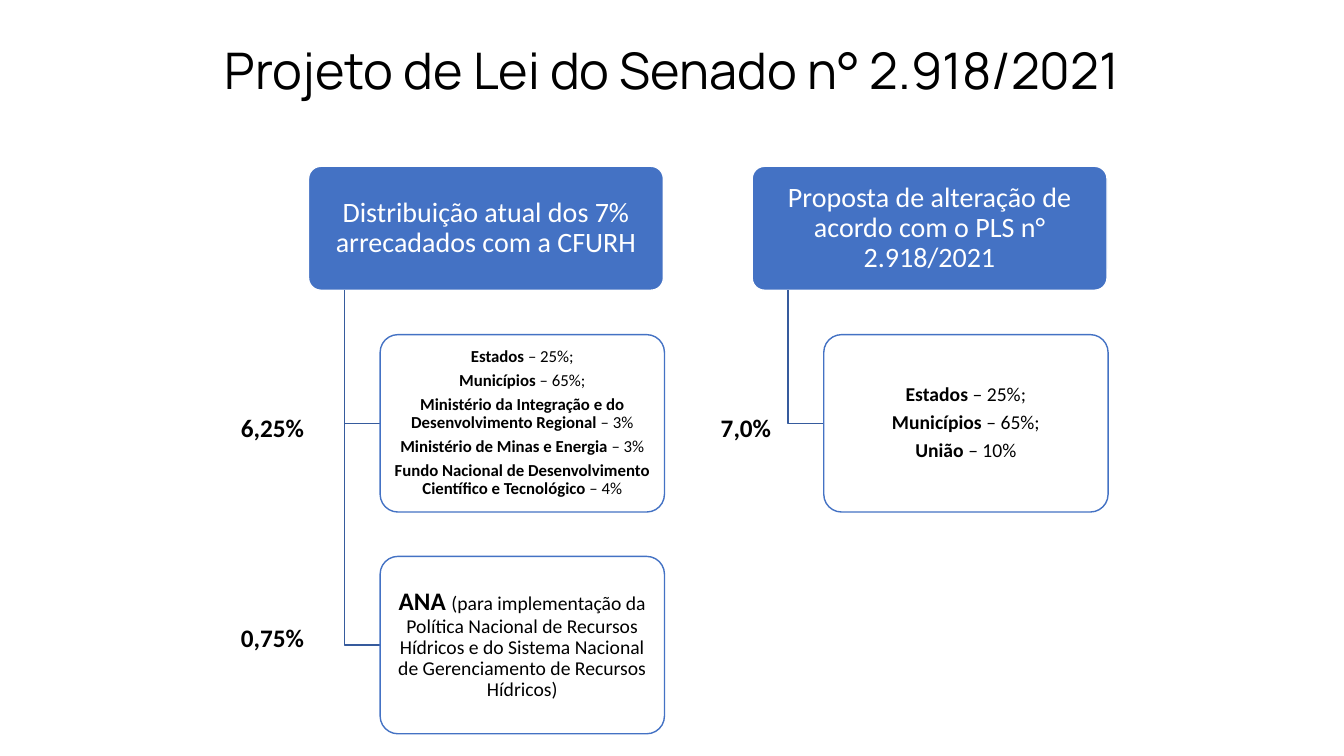
from dataclasses import dataclass

from lxml.etree import SubElement
from pptx import Presentation
from pptx.dml.color import RGBColor
from pptx.enum.shapes import MSO_SHAPE
from pptx.enum.text import MSO_ANCHOR, MSO_AUTO_SIZE, PP_ALIGN
from pptx.oxml.ns import qn
from pptx.util import Inches, Pt


@dataclass(frozen=True)
class Theme:
    blue = RGBColor(0x44, 0x72, 0xC4)
    branch = RGBColor(0x36, 0x5B, 0x9D)
    white = RGBColor(0xFF, 0xFF, 0xFF)
    black = RGBColor(0, 0, 0)
    title_font = "Manrope"
    body_font = "Calibri"
    title_size = 36
    header_size = 20
    label_size = 18
    detail_size = 14
    small_size = 12


theme = Theme()


def add_run(paragraph, text, size, color, bold=False, font_name=theme.body_font):
    run = paragraph.add_run()
    run.text = text
    run.font.name = font_name
    run.font.size = Pt(size)
    run.font.bold = bold
    run.font.color.rgb = color


def add_card(slide, left, top, width, height, fill, line, color, margins, paragraphs):
    """Rounded box; each paragraph is a list of (text, size, bold) runs."""
    card = slide.shapes.add_shape(
        MSO_SHAPE.ROUNDED_RECTANGLE, Inches(left), Inches(top), Inches(width), Inches(height))
    card.adjustments[0] = 0.1
    card.shadow.inherit = False
    card.fill.solid()
    card.fill.fore_color.rgb = fill
    card.line.color.rgb = line
    card.line.width = Pt(1)
    frame = card.text_frame
    frame.word_wrap = True
    frame.vertical_anchor = MSO_ANCHOR.MIDDLE
    frame.margin_left = frame.margin_right = Inches(margins[0])
    frame.margin_top = frame.margin_bottom = Inches(margins[1])
    for index, runs in enumerate(paragraphs):
        paragraph = frame.add_paragraph() if index else frame.paragraphs[0]
        paragraph.alignment = PP_ALIGN.CENTER
        paragraph.line_spacing = 0.9
        paragraph.space_after = Pt(0.35 * runs[0][1])
        for text, size, bold in runs:
            add_run(paragraph, text, size, color, bold)
    return card


presentation = Presentation()
presentation.slide_width = Inches(13.33)
presentation.slide_height = Inches(7.5)
slide = presentation.slides.add_slide(presentation.slide_layouts[5])

title = slide.shapes.title
title.left, title.top = Inches(0), Inches(0.36)
title.width, title.height = Inches(13.33), Inches(0.69)
title.text_frame.auto_size = MSO_AUTO_SIZE.NONE
title.text_frame.word_wrap = True
title.text_frame.vertical_anchor = MSO_ANCHOR.BOTTOM
title_paragraph = title.text_frame.paragraphs[0]
title_paragraph.alignment = PP_ALIGN.CENTER
title_paragraph.line_spacing = 0.9
add_run(title_paragraph, "Projeto de Lei do Senado n° 2.918/2021",
        theme.title_size, theme.black, font_name=theme.title_font)

current_shares = [
    ("Estados", " – 25%;"),
    ("Municípios", " – 65%;"),
    ("Ministério da Integração e do Desenvolvimento Regional", " – 3%"),
    ("Ministério de Minas e Energia", " – 3%"),
    ("Fundo Nacional de Desenvolvimento Científico e Tecnológico ", "– 4%"),
]
proposed_shares = [("Estados", " – 25%;"), ("Municípios", " – 65%;"), ("União ", "– 10%")]
agency = [(
    "ANA ",
    "(para implementação da Política Nacional de Recursos Hídricos e do Sistema Nacional "
    "de Gerenciamento de Recursos Hídricos)",
)]

# Each detail: entries, size of the bold part, size of the rest, text margins
columns = [
    (3.06, "Distribuição atual dos 7% arrecadados com a CFURH", [
        (current_shares, theme.small_size, theme.small_size, (0.03, 0.02)),
        (agency, theme.label_size, theme.detail_size, (0.04, 0.03)),
    ]),
    (7.46, "Proposta de alteração de acordo com o PLS n° 2.918/2021", [
        (proposed_shares, theme.detail_size, theme.detail_size, (0.03, 0.02)),
    ]),
]
header_top, header_width, header_height = 1.65, 3.52, 1.23
header_bottom = header_top + header_height
detail_top, detail_width, detail_height, detail_pitch = 3.32, 2.82, 1.76, 2.2
indent = 0.355

for left, heading, details in columns:
    add_card(slide, left, header_top, header_width, header_height, theme.blue, theme.white,
             theme.white, (0.04, 0.03), [[(heading, theme.header_size, False)]])
    trunk, detail_left = left + indent, left + 2 * indent
    for row, (entries, bold_size, plain_size, margins) in enumerate(details):
        top = detail_top + row * detail_pitch
        middle = top + detail_height / 2

        builder = slide.shapes.build_freeform(Inches(trunk), Inches(header_bottom))
        builder.add_line_segments(
            [(Inches(trunk), Inches(middle)), (Inches(detail_left), Inches(middle))], close=False)
        branch = builder.convert_to_shape()
        branch.shadow.inherit = False
        branch.fill.background()
        branch.line.color.rgb = theme.branch
        branch.line.width = Pt(1)

        paragraphs = [[(name, bold_size, True), (rest, plain_size, False)]
                      for name, rest in entries]
        card = add_card(slide, detail_left, top, detail_width, detail_height, theme.white,
                        theme.blue, theme.black, margins, paragraphs)
        fill_color = card.fill._xPr.find(qn("a:solidFill"))[0]
        SubElement(fill_color, qn("a:alpha"), val="90000")

for text, left, top, width in [
    ("6,25%", 2.29, 4.04, 1.09),
    ("0,75%", 2.29, 6.12, 1.09),
    ("7,0%", 7.05, 4.04, 1.05),
]:
    label = slide.shapes.add_textbox(Inches(left), Inches(top), Inches(width), Inches(0.4))
    label.text_frame.word_wrap = True
    label.text_frame.auto_size = MSO_AUTO_SIZE.SHAPE_TO_FIT_TEXT
    add_run(label.text_frame.paragraphs[0], text, theme.label_size, theme.black, bold=True)

presentation.save("out.pptx")
